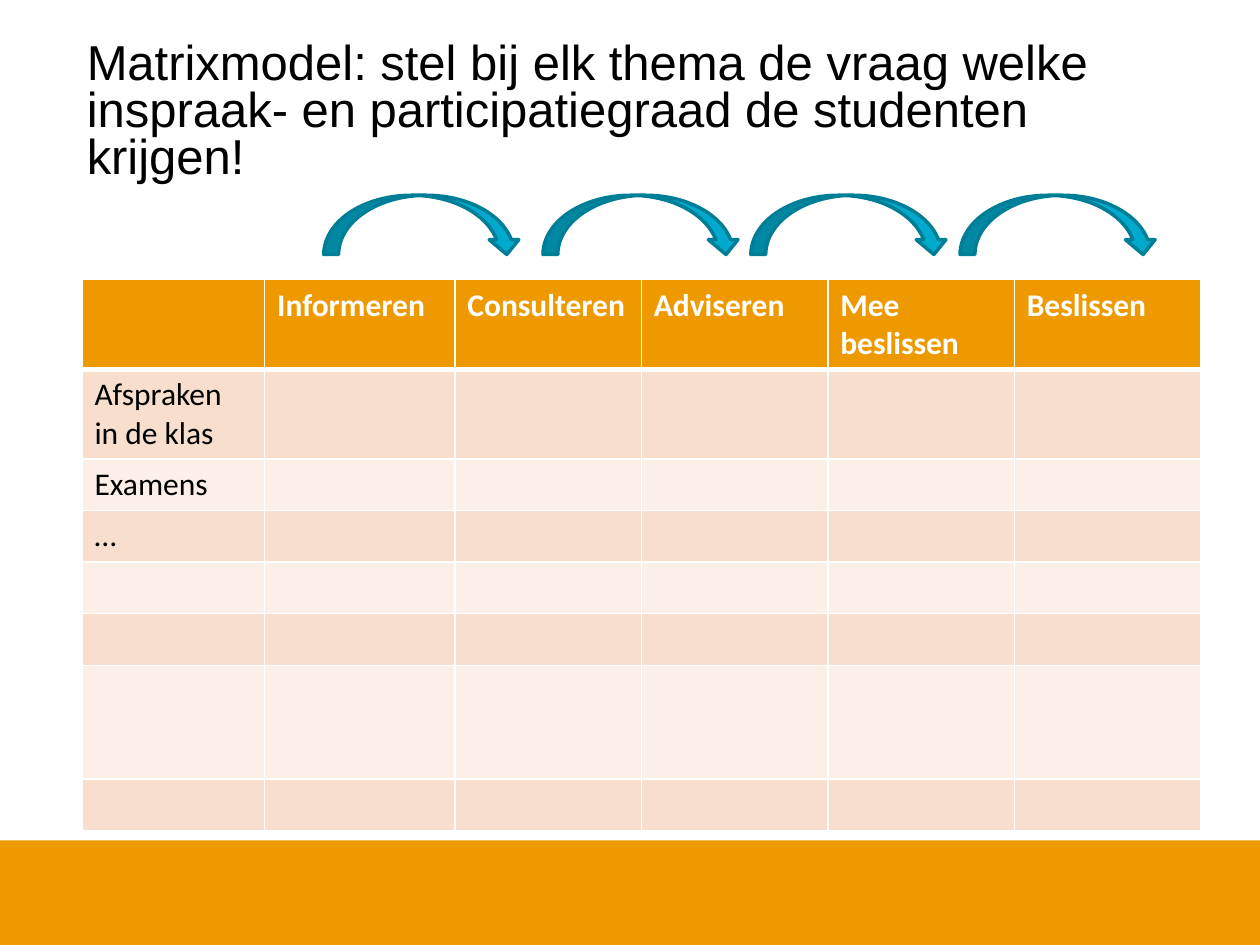
from dataclasses import dataclass

from lxml import etree
from pptx import Presentation
from pptx.dml.color import RGBColor
from pptx.enum import shapes, text
from pptx.oxml import ns
from pptx.util import Inches, Pt

ORANGE, BLACK, WHITE = "EE9900", "000000", "FFFFFF"
BAND_FILLS = ("F8DECC", "FCEFE7")
TEAL, DARK_TEAL = "00AACC", "007E97"

TITLE = ("Matrixmodel: stel bij elk thema de vraag welke inspraak- en "
         "participatiegraad de studenten krijgen!")
DEGREES = ("", "Informeren", "Consulteren", "Adviseren", "Mee beslissen", "Beslissen")
COLUMN_WIDTHS = (1.45, 1.51, 1.48, 1.48, 1.48, 1.48)
ARROW_LEFTS = (2.57, 4.31, 5.96, 7.62)


@dataclass
class Theme:
    label: str = ""
    height: float = 0.41


THEMES = (
    Theme("Afspraken in de klas", 0.7),
    Theme("Examens"),
    Theme("…"),
    Theme(),
    Theme(),
    Theme(height=0.9),
    Theme(),
)


def paint(fill, color: str) -> None:
    fill.solid()
    fill.fore_color.rgb = RGBColor.from_string(color)


def style(paragraph, name: str, size: float, color: str, bold: bool = False) -> None:
    font = paragraph.font
    font.name, font.size, font.bold = name, Pt(size), bold
    font.color.rgb = RGBColor.from_string(color)


def add_borders(cell, top: float = 1, bottom: float = 1) -> None:
    """Draw white cell borders; widths are in points."""
    properties = cell._tc.get_or_add_tcPr()
    for side, width in (("L", 1), ("R", 1), ("T", top), ("B", bottom)):
        line = etree.SubElement(properties, ns.qn(f"a:ln{side}"), w=str(Pt(width)))
        solid = etree.SubElement(line, ns.qn("a:solidFill"))
        etree.SubElement(solid, ns.qn("a:srgbClr"), val=WHITE)


def add_shape(slide, kind, left: float, top: float, width: float, height: float, color: str):
    shape = slide.shapes.add_shape(
        kind, Inches(left), Inches(top), Inches(width), Inches(height))
    shape.shadow.inherit = False
    paint(shape.fill, color)
    shape.line.fill.background()
    return shape


def add_matrix(slide) -> None:
    heights = [0.7] + [theme.height for theme in THEMES]
    matrix = slide.shapes.add_table(
        len(heights), len(DEGREES), Inches(0.65), Inches(2.22),
        Inches(sum(COLUMN_WIDTHS)), Inches(sum(heights))).table
    for column, width in zip(matrix.columns, COLUMN_WIDTHS):
        column.width = Inches(width)
    for row, height in zip(matrix.rows, heights):
        row.height = Inches(height)

    for column, degree in enumerate(DEGREES):
        header = matrix.cell(0, column)
        header.text = degree
        add_borders(header, bottom=3)
        paint(header.fill, ORANGE)
        style(header.text_frame.paragraphs[0], "Calibri", 18, WHITE, bold=True)
        for row, theme in enumerate(THEMES, start=1):
            cell = matrix.cell(row, column)
            cell.text = theme.label if column == 0 else ""
            add_borders(cell, top=3 if row == 1 else 1)
            paint(cell.fill, BAND_FILLS[(row - 1) % 2])
            style(cell.text_frame.paragraphs[0], "Calibri", 18, BLACK)


def add_title(slide) -> None:
    frame = slide.shapes.add_textbox(
        Inches(0.59), Inches(0.29), Inches(9.01), Inches(4.25)).text_frame
    frame.word_wrap = True
    frame.auto_size = text.MSO_AUTO_SIZE.SHAPE_TO_FIT_TEXT
    frame.text = TITLE
    paragraph = frame.paragraphs[0]
    paragraph.line_spacing = 0.8
    style(paragraph, "Arial", 28, BLACK)


def add_step_arrow(slide, left: float) -> None:
    arrow = add_shape(slide, shapes.MSO_SHAPE.CURVED_DOWN_ARROW,
                      left, 1.55, 1.57, 0.47, TEAL)
    paint(arrow.line.fill, DARK_TEAL)
    arrow.line.width = Pt(2)


def main() -> None:
    deck = Presentation()
    deck.slide_width, deck.slide_height = Inches(10), Inches(7.5)
    slide = deck.slides.add_slide(deck.slide_layouts[6])
    add_shape(slide, shapes.MSO_SHAPE.RECTANGLE, 0, 6.67, 10, 0.83, ORANGE)
    add_matrix(slide)
    add_title(slide)
    for left in ARROW_LEFTS:
        add_step_arrow(slide, left)
    deck.save("out.pptx")


if __name__ == "__main__":
    main()
